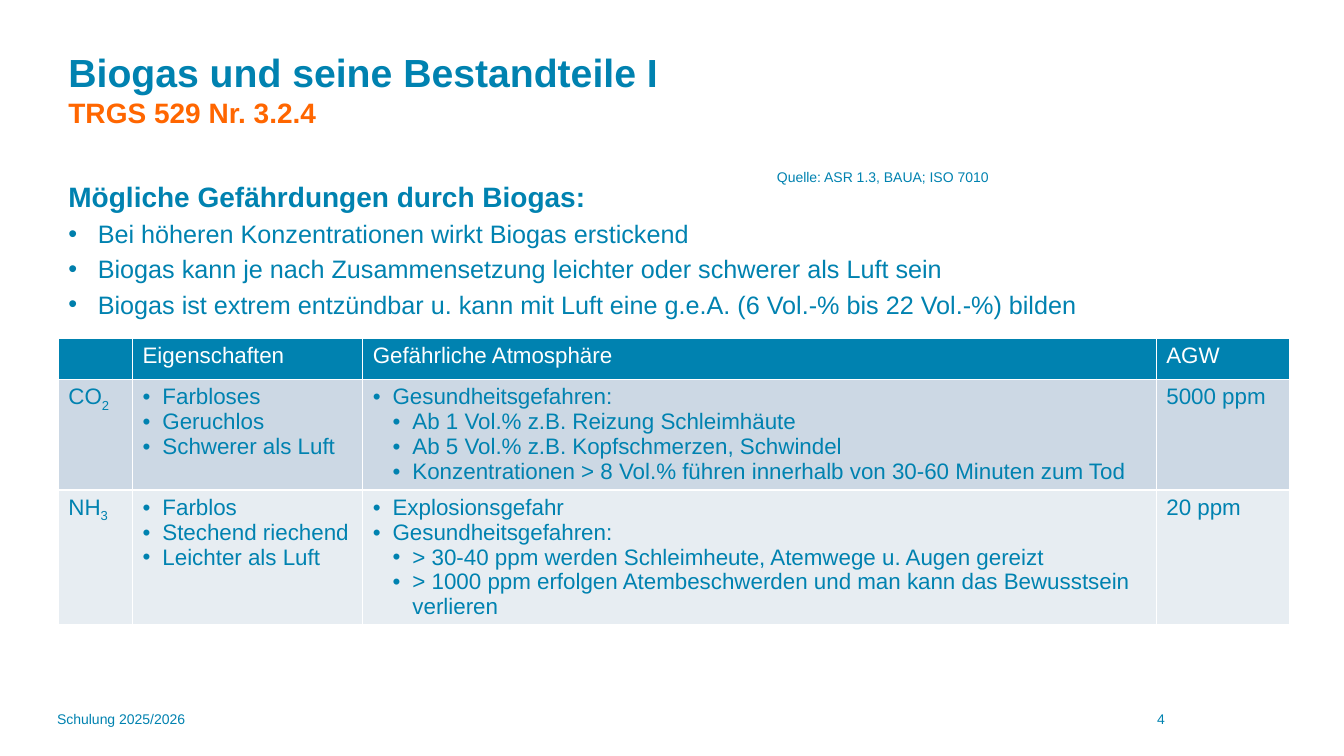
from lxml import etree
from pptx import Presentation, util as u
from pptx.dml.color import RGBColor
from pptx.enum import text as t
from pptx.oxml import ns

BLUE, ORANGE, WHITE = "0082B0", "FF6600", "FFFFFF"
BULLET_BLUE = "007FAC"
ROW_FILLS = [BLUE, "CCD8E4", "E7EDF2"]
CELL_INDENT = 0.5

SUBSTANCES = [
    ("CO", "2", ["Farbloses", "Geruchlos", "Schwerer als Luft"],
     [(1, "Gesundheitsgefahren:"),
      (2, "Ab 1 Vol.% z.B. Reizung Schleimhäute"),
      (2, "Ab 5 Vol.% z.B. Kopfschmerzen, Schwindel"),
      (2, "Konzentrationen > 8 Vol.% führen innerhalb von 30-60 Minuten zum Tod")],
     "5000 ppm"),
    ("NH", "3", ["Farblos", "Stechend riechend", "Leichter als Luft"],
     [(1, "Explosionsgefahr"),
      (1, "Gesundheitsgefahren:"),
      (2, "> 30-40 ppm werden Schleimheute, Atemwege u. Augen gereizt"),
      (2, "> 1000 ppm erfolgen Atembeschwerden und man kann das Bewusstsein verlieren")],
     "20 ppm"),
]


def rgb(value):
    return RGBColor.from_string(value)


def child(parent, tag, **attributes):
    return etree.SubElement(parent, ns.qn(tag), attributes)


def write(para, words, size=16, color=BLUE, bold=False, subscript=False):
    """Append a formatted span to a paragraph."""
    span = para.add_run()
    span.text = words
    span.font.name = "Arial"
    span.font.size = u.Pt(size)
    span.font.bold = bold
    span.font.color.rgb = rgb(color)
    if subscript:
        span.font._element.set("baseline", "-25000")


def indent(para, left, hanging, bullet_color=None):
    """Set a hanging indent in cm, with a bullet if it has a colour."""
    properties = para._p.get_or_add_pPr()
    properties.set("marL", str(u.Cm(left)))
    properties.set("indent", str(-u.Cm(hanging)))
    if bullet_color:
        child(child(properties, "a:buClr"), "a:srgbClr", val=bullet_color)
        child(properties, "a:buFont", typeface="Arial")
        child(properties, "a:buChar", char="•")
    else:
        child(properties, "a:buNone")


def next_para(frame):
    """Return the empty first paragraph, or a new one."""
    first = frame.paragraphs[0]
    return frame.add_paragraph() if first.runs else first


class Builder:
    """Holds the deck and the current page."""

    def __init__(self):
        self.deck = Presentation()
        self.deck.slide_width, self.deck.slide_height = u.Cm(33.87), u.Cm(19.05)
        self.page = self.deck.slides.add_slide(self.deck.slide_layouts[1])

    def place(self, box, left, top, width, height, anchor):
        box.left, box.top = u.Cm(left), u.Cm(top)
        box.width, box.height = u.Cm(width), u.Cm(height)
        frame = box.text_frame
        frame.word_wrap = True
        frame.auto_size = t.MSO_AUTO_SIZE.NONE
        frame.vertical_anchor = anchor
        return frame

    def title(self, heading, subheading):
        frame = self.place(self.page.shapes.title, 1.47, 0.64, 21.87, 3.18,
                           t.MSO_ANCHOR.MIDDLE)
        para = frame.paragraphs[0]
        para.alignment = t.PP_ALIGN.LEFT
        write(para, heading, size=28, bold=True)
        para.add_line_break()
        write(para, subheading, size=20, color=ORANGE, bold=True)

    def body(self, heading, points):
        frame = self.place(self.page.placeholders[1], 1.47, 4.4, 31.04, 12.5,
                           t.MSO_ANCHOR.TOP)
        para = next_para(frame)
        indent(para, 0.43, 0.43)
        para.space_before = u.Pt(0)
        write(para, heading, size=20, bold=True)
        for point in points:
            para = next_para(frame)
            indent(para, 0.74, 0.74, BULLET_BLUE)
            write(para, point, size=18)

    def label(self, words, left, top, width, height, align=t.PP_ALIGN.LEFT):
        box = self.page.shapes.add_textbox(0, 0, 0, 0)
        frame = self.place(box, left, top, width, height, t.MSO_ANCHOR.TOP)
        frame.paragraphs[0].alignment = align
        write(frame.paragraphs[0], words, size=10)

    def table(self, left, top, widths, heights):
        grid = self.page.shapes.add_table(
            len(heights), len(widths), u.Cm(left), u.Cm(top),
            u.Cm(sum(widths)), u.Cm(sum(heights))).table
        for column, width in zip(grid.columns, widths):
            column.width = u.Cm(width)
        for row, height, fill in zip(grid.rows, heights, ROW_FILLS):
            row.height = u.Cm(height)
            for cell in row.cells:
                self.style_cell(cell, fill)
        return grid

    def style_cell(self, cell, fill):
        properties = cell._tc.get_or_add_tcPr()
        for side in "LRTB":
            line = child(properties, f"a:ln{side}", w=str(u.Pt(1)))
            child(child(line, "a:solidFill"), "a:srgbClr", val=WHITE)
        cell.fill.solid()
        cell.fill.fore_color.rgb = rgb(fill)

    def cell_list(self, cell, items):
        for level, words in items:
            para = next_para(cell.text_frame)
            indent(para, CELL_INDENT * level, CELL_INDENT, BLUE)
            write(para, words)


def main():
    builder = Builder()
    builder.title("Biogas und seine Bestandteile I", "TRGS 529 Nr. 3.2.4")
    builder.body("Mögliche Gefährdungen durch Biogas:", [
        "Bei höheren Konzentrationen wirkt Biogas erstickend",
        "Biogas kann je nach Zusammensetzung leichter oder schwerer als Luft sein",
        "Biogas ist extrem entzündbar u. kann mit Luft eine g.e.A. "
        "(6 Vol.-% bis 22 Vol.-%) bilden",
    ])

    grid = builder.table(1.47, 8.53, [1.87, 5.8, 20, 3.37], [1.04, 2.78, 3.38])
    for column, name in enumerate(["Eigenschaften", "Gefährliche Atmosphäre", "AGW"], 1):
        write(grid.cell(0, column).text_frame.paragraphs[0], name, color=WHITE)
    for row, (element, count, traits, dangers, limit) in enumerate(SUBSTANCES, 1):
        formula = grid.cell(row, 0).text_frame.paragraphs[0]
        write(formula, element)
        write(formula, count, subscript=True)
        builder.cell_list(grid.cell(row, 1), [(1, trait) for trait in traits])
        builder.cell_list(grid.cell(row, 2), dangers)
        write(grid.cell(row, 3).text_frame.paragraphs[0], limit)

    builder.label("Quelle: ASR 1.3, BAUA; ISO 7010", 19.33, 4.11, 14.5, 0.69)
    builder.label("Schulung 2025/2026", 1.19, 17.78, 8.26, 1.27)
    builder.label("4", 25.73, 17.78, 7.06, 1.27, align=t.PP_ALIGN.CENTER)
    builder.deck.save("out.pptx")


if __name__ == "__main__":
    main()
